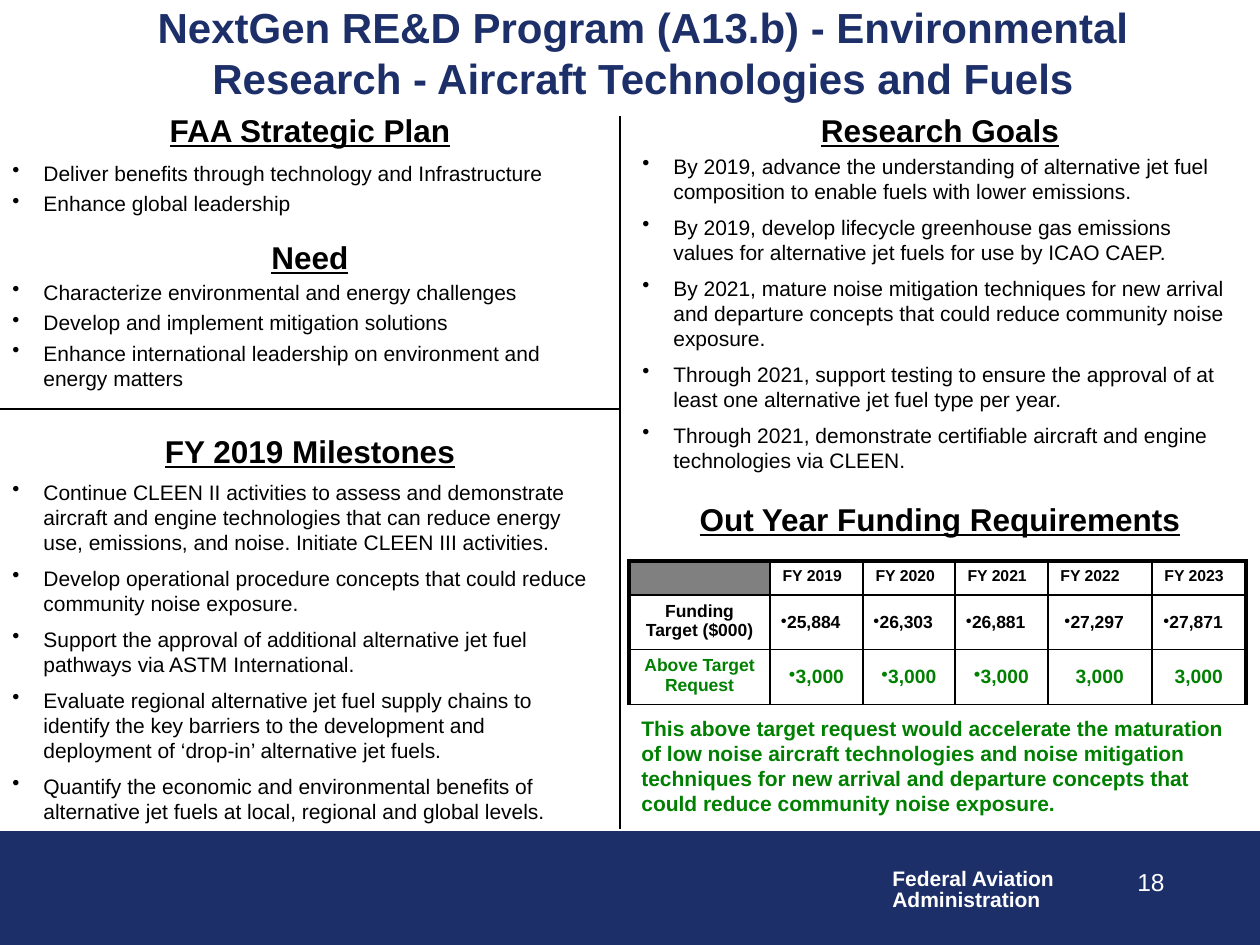
from lxml import etree
from pptx import Presentation
from pptx import util as u
from pptx.dml.color import RGBColor
from pptx.enum import shapes, text
from pptx.oxml import ns

SCALE = u.Inches(1) / 126
FONT = "Arial"
COLORS = {"navy": "1D2F68", "black": "000000", "white": "FFFFFF", "green": "008000", "gray": "808080"}
CENTER, LEFT, RIGHT = text.PP_ALIGN.CENTER, text.PP_ALIGN.LEFT, text.PP_ALIGN.RIGHT

STRATEGY = ["Deliver benefits through technology and Infrastructure", "Enhance global leadership"]
NEEDS = [
    "Characterize environmental and energy challenges",
    "Develop and implement mitigation solutions",
    "Enhance international leadership on environment and energy matters",
]
MILESTONES = [
    "Continue CLEEN II activities to assess and demonstrate aircraft and engine technologies that can reduce "
    "energy use, emissions, and noise. Initiate CLEEN III activities.",
    "Develop operational procedure concepts that could reduce community noise exposure.",
    "Support the approval of additional alternative jet fuel pathways via ASTM International.",
    "Evaluate regional alternative jet fuel supply chains to identify the key barriers to the development and "
    "deployment of ‘drop-in’ alternative jet fuels.",
    "Quantify the economic and environmental benefits of alternative jet fuels at local, regional and global levels.",
]
GOALS = [
    "By 2019, advance the understanding of alternative jet fuel composition to enable fuels with lower emissions.",
    "By 2019, develop lifecycle greenhouse gas emissions values for alternative jet fuels for use by ICAO CAEP.",
    "By 2021, mature noise mitigation techniques for new arrival and departure concepts that could reduce "
    "community noise exposure.",
    "Through 2021, support testing to ensure the approval of at least one alternative jet fuel type per year.",
    "Through 2021, demonstrate certifiable aircraft and engine technologies via CLEEN.",
]
FUNDING = [
    ["", "FY 2019", "FY 2020", "FY 2021", "FY 2022", "FY 2023"],
    ["Funding Target ($000)", "25,884", "26,303", "26,881", "27,297", "27,871"],
    ["Above Target Request", "3,000", "3,000", "3,000", "3,000", "3,000"],
]
REQUEST = (
    "This above target request would accelerate the maturation of low noise aircraft technologies and noise "
    "mitigation techniques for new arrival and departure concepts that could reduce community noise exposure."
)


def px(length):
    """Turn pixels into EMU."""
    return u.Emu(round(length * SCALE))


def rgb(name):
    """Look up a named colour."""
    return RGBColor.from_string(COLORS[name])


def add_bullet(para, indent=0):
    """Give a paragraph a round bullet with a hanging indent."""
    props = para._p.get_or_add_pPr()
    props.set("marL", str(px(indent)))
    props.set("indent", str(-px(indent)))
    etree.SubElement(props, ns.qn("a:buChar")).set("char", "•")


def style(para, size, color="black", bold=False, underline=False, align=LEFT):
    """Set the font and alignment of a paragraph."""
    para.alignment = align
    font = para.font
    font.name, font.size, font.bold, font.underline = FONT, u.Pt(size), bold, underline
    font.color.rgb = rgb(color)


def add_text(page, box, lines, size, gap=0, indent=0, spacing=None, wrap=True, middle=False, **look):
    """Place a text box with one paragraph per line."""
    frame = page.shapes.add_textbox(*map(px, box)).text_frame
    frame.word_wrap = wrap
    frame.vertical_anchor = text.MSO_ANCHOR.MIDDLE if middle else text.MSO_ANCHOR.TOP
    for index, line in enumerate(lines):
        para = frame.add_paragraph() if index else frame.paragraphs[0]
        para.text = line
        if spacing:
            para.line_spacing = spacing
        if index:
            para.space_before = u.Pt(gap)
        if indent:
            add_bullet(para, indent)
        style(para, size, **look)


def add_rule(page, start, end):
    """Draw a thin black divider."""
    rule = page.shapes.add_connector(shapes.MSO_CONNECTOR.STRAIGHT, *map(px, start + end))
    rule.line.color.rgb = rgb("black")
    rule.line.width = u.Pt(0.75)
    etree.SubElement(rule._element.spPr, ns.qn("a:effectLst"))


def add_heading(page, box):
    """Return a writer for the underlined heading across the top of a box."""
    left, top, width, _ = box
    return lambda title: add_text(page, (left, top, width, 42), [title], 18, bold=True, underline=True, align=CENTER)


def add_section(page, box, title, points, gap, inset, offset):
    """Place a heading with its bulleted list."""
    left, top, width, height = box
    add_heading(page, box)(title)
    add_text(page, (left + inset, top + offset, width - 11 - inset, height - offset), points, 12, gap, indent=31)


def set_borders(cell, row, column, last_column):
    """Frame a cell, heavier on the table's left, top and right edges."""
    props = cell._tc.get_or_add_tcPr()
    heavy = {"lnL": column == 0, "lnR": column == last_column, "lnT": row == 0, "lnB": False}
    for place, (tag, thick) in enumerate(heavy.items()):
        line = etree.Element(ns.qn("a:" + tag), w=str(u.Pt(2.25 if thick else 1)))
        fill = etree.SubElement(line, ns.qn("a:solidFill"))
        etree.SubElement(fill, ns.qn("a:srgbClr"), val=COLORS["black"])
        props.insert(place, line)


def fill_cell(cell, row, column, value):
    """Write and style one funding cell."""
    is_amount = row > 0 and column > 0
    para = cell.text_frame.paragraphs[0]
    if value:
        para.text = value
    else:
        etree.SubElement(para._p, ns.qn("a:endParaRPr"), sz="900")
    if is_amount:
        cell.vertical_anchor = text.MSO_ANCHOR.MIDDLE
        if row == 1:
            cell.margin_left = cell.margin_top = px(1)
            cell.margin_bottom = 0
        if row == 1 or column < 4:
            add_bullet(para)
    size = 9 if row == 0 else 11 if row == 2 and is_amount else 10
    style(para, size, "green" if row == 2 else "black", bold=True, align=CENTER if row else LEFT)
    if value:
        cell.fill.background()
    else:
        cell.fill.solid()
        cell.fill.fore_color.rgb = rgb("gray")


def add_funding(page, box):
    """Place the funding heading, table and request note."""
    left, top, width, _ = box
    add_heading(page, box)("Out Year Funding Requirements")
    widths, heights = [141, 93, 92, 93, 104, 94], [34, 54, 54]
    place = (left + 9, top + 67, sum(widths), sum(heights))
    table = page.shapes.add_table(len(heights), len(widths), *map(px, place)).table
    table.first_row = table.horz_banding = False
    for column, size in zip(table.columns, widths):
        column.width = px(size)
    for row, (values, size) in enumerate(zip(FUNDING, heights)):
        table.rows[row].height = px(size)
        for column, value in enumerate(values):
            cell = table.cell(row, column)
            fill_cell(cell, row, column, value)
            set_borders(cell, row, column, len(widths) - 1)
    add_text(page, (left + 9, top + 215, width - 20, 115), [REQUEST], 12, color="green", bold=True)


def add_footer(page, box):
    """Place the navy band with the agency name and page number."""
    left, top, _, _ = box
    band = page.shapes.add_shape(shapes.MSO_SHAPE.RECTANGLE, *map(px, box))
    band.shadow.inherit = False
    band.fill.solid()
    band.fill.fore_color.rgb = band.line.color.rgb = rgb("navy")
    band.line.width = u.Pt(0.75)
    agency = ["Federal Aviation", "Administration"]
    add_text(page, (left + 880, top + 31, 189, 55), agency, 12, spacing=0.85, wrap=False, color="white", bold=True)
    add_text(page, (left + 915, top + 29, 262, 63), ["18"], 14, color="white", align=RIGHT)


def main():
    """Build the slide."""
    deck = Presentation()
    deck.slide_width, deck.slide_height = px(1260), px(945)
    page = deck.slides.add_slide(deck.slide_layouts[6])
    add_footer(page, (0, 832, 1260, 112))
    title = "NextGen RE&D Program (A13.b) - Environmental Research - Aircraft Technologies and Fuels"
    add_text(page, (59, 10, 1168, 84), [title], 24, middle=True, color="navy", bold=True, align=CENTER)
    add_section(page, (0, 105, 620, 118), "FAA Strategic Plan", STRATEGY, 3, 0, 49)
    add_section(page, (0, 232, 620, 166), "Need", NEEDS, 3, 0, 41)
    add_section(page, (0, 426, 620, 416), "FY 2019 Milestones", MILESTONES, 6, 0, 47)
    add_section(page, (620, 105, 640, 386), "Research Goals", GOALS, 6, 10, 42)
    add_funding(page, (620, 494, 640, 330))
    add_rule(page, (620, 116), (620, 829))
    add_rule(page, (0, 409), (620, 409))
    deck.save("out.pptx")


if __name__ == "__main__":
    main()
